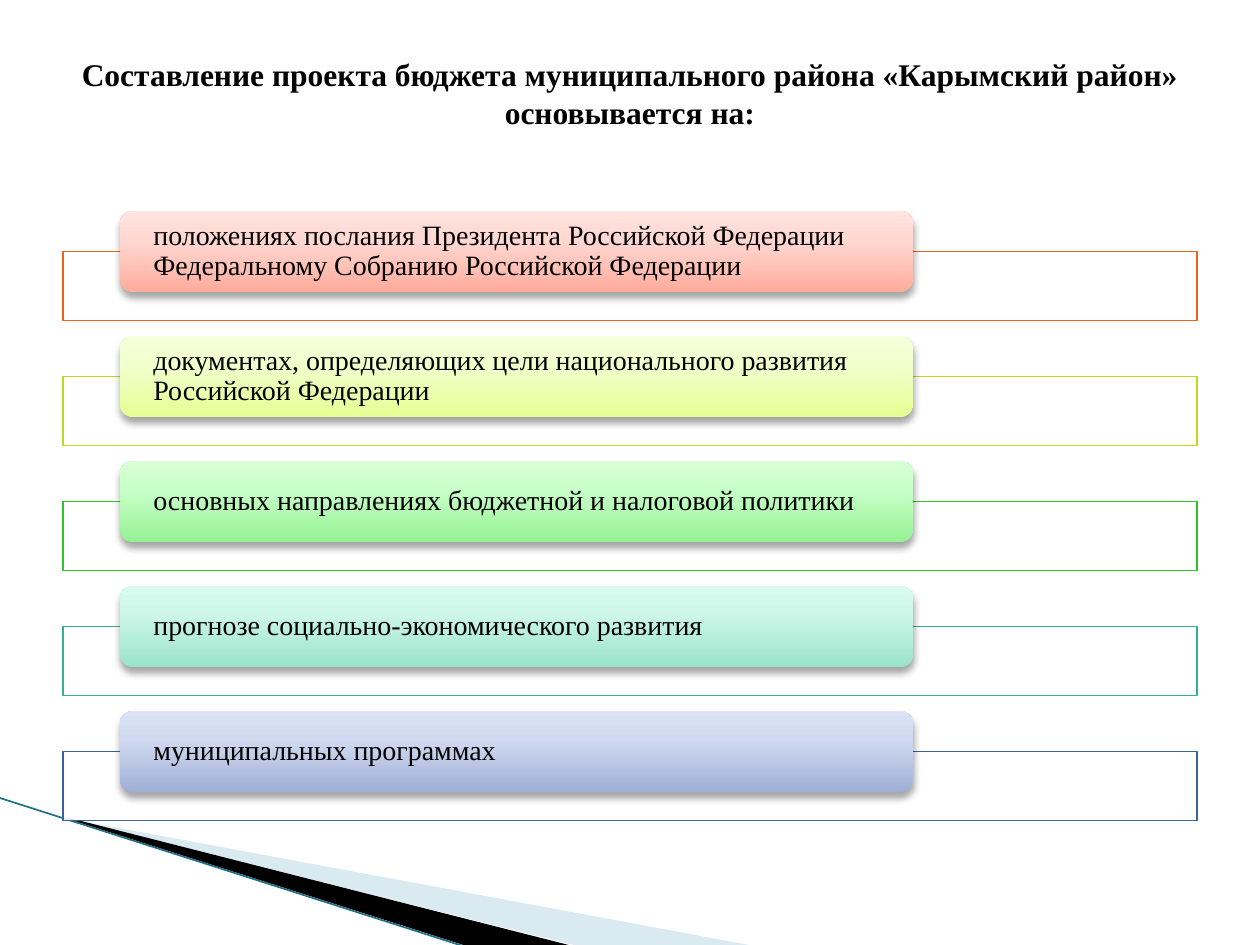
import copy
from dataclasses import dataclass

import pptx
import pptx.dml.color
import pptx.enum.shapes
import pptx.enum.text
import pptx.oxml
import pptx.oxml.ns
import pptx.util

Pt = pptx.util.Pt
ANCHOR = pptx.enum.text.MSO_ANCHOR
ALIGN = pptx.enum.text.PP_ALIGN
SHAPE = pptx.enum.shapes.MSO_SHAPE


@dataclass(frozen=True)
class Theme:
    font: str = "Times New Roman"
    title_size: float = 18
    item_size: float = 16
    text: str = "000000"
    panel: str = "FFFFFF"
    pale_wedge: str = "A0CBDC"
    dark_wedge: str = "000000"
    edge: str = "1F6F86"
    edge_width: float = 0.95
    panel_line: float = 0.75


THEME = Theme()
TITLE = "Составление проекта бюджета муниципального района «Карымский район» основывается на:"
ITEMS = [
    ("положениях послания Президента Российской Федерации Федеральному Собранию Российской Федерации",
     "EB641B", ("FFAC9C", "FFD8D2", "FFE4DF")),
    ("документах, определяющих цели национального развития Российской Федерации",
     "BDDA20", ("E4FF93", "F1FFCD", "F5FFDC")),
    ("основных направлениях бюджетной и налоговой политики",
     "2FC529", ("95F294", "C8FFC8", "D9FFD8")),
    ("прогнозе социально-экономического развития",
     "32B094", ("9AE3CB", "CCF6E8", "D9FBEF")),
    ("муниципальных программах",
     "39639D", ("9FAFD6", "D0D9EF", "DCE3F6")),
]
FIRST_PANEL_TOP, FIRST_TAB_TOP, PITCH = 143.8, 120.5, 71.45


def rgb(value):
    return pptx.dml.color.RGBColor.from_string(value)


def xml(text):
    return pptx.oxml.parse_xml(text.replace(" ", f" {pptx.oxml.ns.nsdecls('a')} ", 1))


def apply(target, values):
    for name, value in values.items():
        setattr(target, name, value)


def fill_solid(shape, color, opacity=100):
    shape.fill.solid()
    shape.fill.fore_color.rgb = rgb(color)
    if opacity < 100:
        color_element = shape.fill._xPr.find(".//" + pptx.oxml.ns.qn("a:srgbClr"))
        color_element.append(xml(f'<a:alpha val="{opacity * 1000}"/>'))


def fill_gradient(shape, colors):
    shape.fill.gradient()
    shape.fill.gradient_angle = 90
    stop_list = shape._element.spPr.find(".//" + pptx.oxml.ns.qn("a:gsLst"))
    stop_list.append(copy.deepcopy(stop_list[0]))
    for stop, color, position in zip(shape.fill.gradient_stops, colors, (0, 0.65, 1)):
        stop.color.rgb = rgb(color)
        stop.position = position


def add_drop_shadow(shape):
    effects = shape._element.spPr.find(pptx.oxml.ns.qn("a:effectLst"))
    effects.append(xml(
        f'<a:outerShdw blurRad="{Pt(4)}" dist="{Pt(3)}" dir="5400000" rotWithShape="0">'
        '<a:srgbClr val="000000"><a:alpha val="35000"/></a:srgbClr></a:outerShdw>'))


def write_text(frame, text, frame_format, paragraph_format, font_format):
    apply(frame, {"word_wrap": True, "vertical_anchor": ANCHOR.MIDDLE, **frame_format})
    paragraph = frame.paragraphs[0]
    apply(paragraph, paragraph_format)
    run = paragraph.add_run()
    run.text = text
    apply(run.font, {"name": THEME.font, **font_format})
    run.font.color.rgb = rgb(THEME.text)


def add_wedge(slide, points, color, opacity=100):
    builder = slide.shapes.build_freeform(*points[0], scale=Pt(1))
    builder.add_line_segments(points[1:], close=True)
    shape = builder.convert_to_shape()
    shape.shadow.inherit = False
    fill_solid(shape, color, opacity)
    shape.line.fill.background()


def add_edge(slide, start, end):
    line = slide.shapes.add_connector(
        pptx.enum.shapes.MSO_CONNECTOR.STRAIGHT, *map(Pt, start + end))
    line.line.color.rgb = rgb(THEME.edge)
    line.line.width = Pt(THEME.edge_width)
    line._element.spPr.append(xml("<a:effectLst />"))


def add_panel(slide, top, line_color):
    panel = slide.shapes.add_shape(SHAPE.RECTANGLE, Pt(36), Pt(top), Pt(648), Pt(39.5))
    panel.shadow.inherit = False
    fill_solid(panel, THEME.panel, 90)
    panel.line.color.rgb = rgb(line_color)
    panel.line.width = Pt(THEME.panel_line)


def add_tab(slide, top, text, colors):
    tab = slide.shapes.add_shape(
        SHAPE.ROUNDED_RECTANGLE, Pt(68.4), Pt(top), Pt(453.6), Pt(46.5))
    tab.shadow.inherit = False
    fill_gradient(tab, colors)
    tab.line.fill.background()
    add_drop_shadow(tab)
    write_text(
        tab.text_frame, text,
        {"margin_left": Pt(17), "margin_right": Pt(17), "margin_top": 0, "margin_bottom": 0},
        {"alignment": ALIGN.LEFT, "line_spacing": 0.9},
        {"size": Pt(THEME.item_size)})


def set_title(slide):
    title = slide.shapes.title
    apply(title, {"left": Pt(36), "top": Pt(22), "width": Pt(648), "height": Pt(62)})
    write_text(
        title.text_frame, TITLE,
        {"auto_size": pptx.enum.text.MSO_AUTO_SIZE.NONE},
        {"alignment": ALIGN.CENTER},
        {"size": Pt(THEME.title_size), "bold": True})


def main():
    """Build the slide on the foundations of the district budget."""
    presentation = pptx.Presentation()
    apply(presentation, {"slide_width": Pt(720), "slide_height": Pt(540)})
    slide = presentation.slides.add_slide(presentation.slide_layouts.get_by_name("Title Only"))
    set_title(slide)
    add_wedge(slide, [(39.6, 468.5), (428.4, 540.5), (328.4, 540.5), (39.6, 468)],
              THEME.pale_wedge, 40)
    add_wedge(slide, [(38.2, 467.3), (329, 540.7), (267.8, 541.4), (38.9, 468)],
              THEME.dark_wedge)
    add_edge(slide, (-0.7, 455.8), (267.1, 541.4))
    for index, (text, line_color, colors) in enumerate(ITEMS):
        add_panel(slide, FIRST_PANEL_TOP + index * PITCH, line_color)
        add_tab(slide, FIRST_TAB_TOP + index * PITCH, text, colors)
    presentation.save("out.pptx")


if __name__ == "__main__":
    main()
